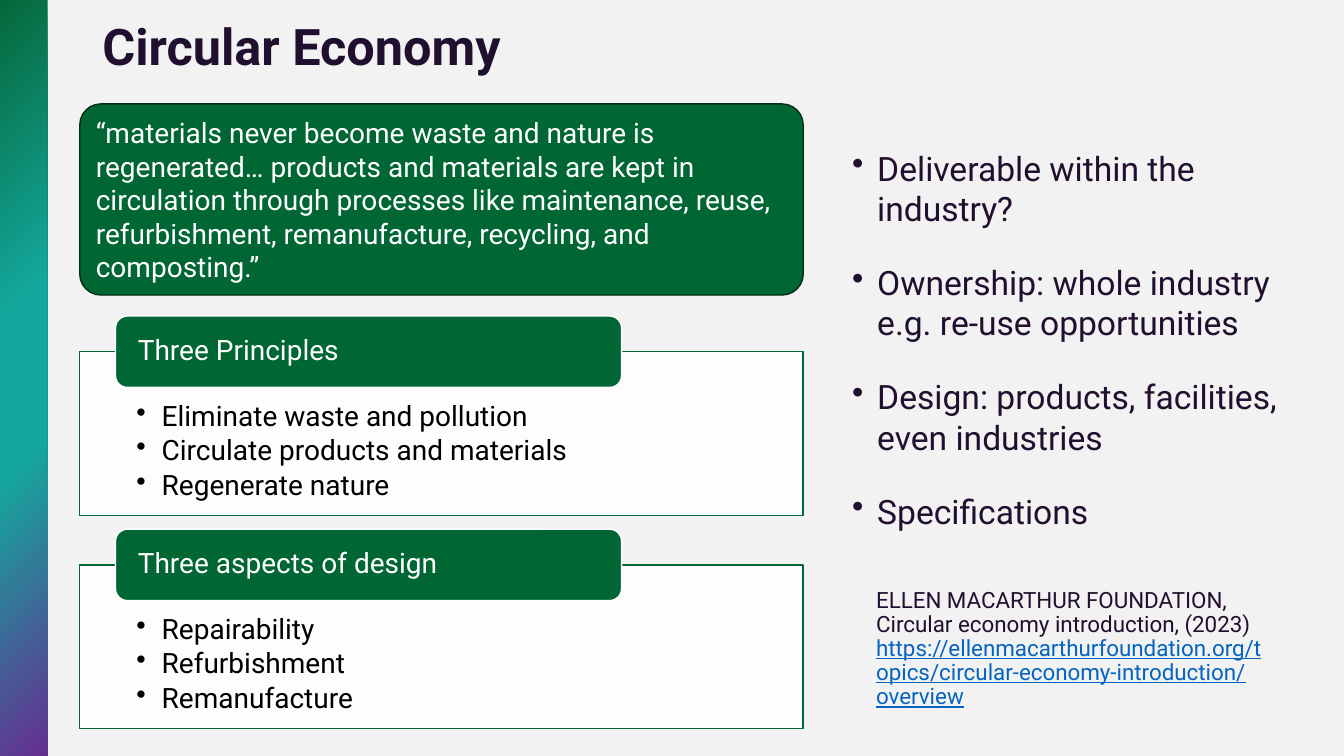
"""Build the Circular Economy slide."""
from dataclasses import dataclass

from pptx import Presentation
from pptx.dml.color import RGBColor
from pptx.enum.shapes import MSO_SHAPE
from pptx.enum.text import MSO_ANCHOR, PP_ALIGN
from pptx.oxml import parse_xml
from pptx.oxml.ns import nsdecls, qn
from pptx.oxml.xmlchemy import OxmlElement
from pptx.util import Emu, Pt

RECT = MSO_SHAPE.RECTANGLE
ROUNDED = MSO_SHAPE.ROUNDED_RECTANGLE
TOP, MIDDLE = MSO_ANCHOR.TOP, MSO_ANCHOR.MIDDLE
LEFT = PP_ALIGN.LEFT

EMU_PER_PX = 9525
FONT = "Roboto"
COLOURS = {
    "background": "F2F2F2",
    "ink": "210F2F",
    "green": "006633",
    "dark green": "002D16",
    "white": "FFFFFF",
    "black": "000000",
    "link": "0563C1",
}
BAR_STOPS = {0: "662E91", 40: "14A79D", 60: "14A79D", 100: "05683A"}
PANEL_PITCH = 203
BULLET_INDENT = 24


@dataclass(frozen=True)
class Box:
    left: int
    top: int
    width: int
    height: int

    def down(self, distance: int) -> "Box":
        return Box(self.left, self.top + distance, self.width, self.height)


@dataclass(frozen=True)
class Piece:
    text: str
    size: int
    colour: str
    bold: bool = False
    underline: bool = False


@dataclass(frozen=True)
class Panel:
    heading: str
    points: tuple[str, ...]


PANELS = (
    Panel("Three Principles", (
        "Eliminate waste and pollution",
        "Circulate products and materials",
        "Regenerate nature",
    )),
    Panel("Three aspects of design", ("Repairability", "Refurbishment", "Remanufacture")),
)
PANEL_BOX = Box(76, 335, 689, 156)
HEADING_BOX = Box(110, 301, 482, 68)
QUOTE = (
    "“materials never become waste and nature is regenerated… products and materials "
    "are kept in circulation through processes like maintenance, reuse, refurbishment, "
    "remanufacture, recycling, and composting.”"
)
QUESTIONS = (
    "Deliverable within the industry?",
    "Ownership: whole industry e.g. re-use opportunities",
    "Design: products, facilities, even industries",
    "Specifications",
)
CITATION = (
    Piece("ELLEN MACARTHUR FOUNDATION, Circular economy introduction, (2023) ", 16, "ink"),
    Piece("https://ellenmacarthurfoundation.org/topics/circular-economy-introduction/overview",
          16, "link", underline=True),
)


def px(length: int) -> Emu:
    return Emu(length * EMU_PER_PX)


def rgb(name: str) -> RGBColor:
    return RGBColor.from_string(COLOURS[name])


def add_box(slide, kind, box: Box, fill: str, line: str):
    shape = slide.shapes.add_shape(kind, px(box.left), px(box.top), px(box.width), px(box.height))
    shape.shadow.inherit = False
    shape.fill.solid()
    shape.fill.fore_color.rgb = rgb(fill)
    shape.line.color.rgb = rgb(line)
    shape.line.width = Pt(1)
    return shape


def add_text_box(slide, box: Box):
    return slide.shapes.add_textbox(px(box.left), px(box.top), px(box.width), px(box.height))


def add_bullet(paragraph) -> None:
    properties = paragraph._p.get_or_add_pPr()
    properties.set("marL", str(px(BULLET_INDENT)))
    properties.set("indent", str(-px(BULLET_INDENT)))
    bullet = OxmlElement("a:buChar")
    bullet.set("char", "•")
    properties.append(bullet)


def write(shape, paragraphs, anchor=TOP, bulleted: bool = False, before: int = 0,
          margins: dict[str, int] | None = None, **spacing) -> None:
    frame = shape.text_frame
    frame.word_wrap = True
    frame.vertical_anchor = anchor
    for side, length in (margins or {}).items():
        setattr(frame, f"margin_{side}", px(length))
    for index, pieces in enumerate(paragraphs):
        paragraph = frame.add_paragraph() if index else frame.paragraphs[0]
        if bulleted:
            add_bullet(paragraph)
        formats = {"alignment": LEFT, "space_before": Pt(before if index else 0), **spacing}
        for attribute, value in formats.items():
            setattr(paragraph, attribute, value)
        for piece in pieces:
            run = paragraph.add_run()
            run.text = piece.text
            looks = {"name": FONT, "size": Pt(piece.size), "bold": piece.bold,
                     "underline": piece.underline}
            for attribute, value in looks.items():
                setattr(run.font, attribute, value)
            run.font.color.rgb = rgb(piece.colour)


def add_gradient_bar(slide) -> None:
    bar = add_box(slide, RECT, Box(0, 0, 45, 720), "green", "green")
    bar.line.fill.background()
    stops = "".join(
        f'<a:gs pos="{position * 1000}"><a:srgbClr val="{colour}"/></a:gs>'
        for position, colour in BAR_STOPS.items()
    )
    gradient = parse_xml(
        f'<a:gradFill {nsdecls("a")} rotWithShape="1"><a:gsLst>{stops}</a:gsLst>'
        '<a:path path="circle"><a:fillToRect l="100000" t="100000"/></a:path></a:gradFill>'
    )
    properties = bar.element.spPr
    properties.replace(properties.find(qn("a:solidFill")), gradient)


def add_panel(slide, panel: Panel, distance: int) -> None:
    body = add_box(slide, RECT, PANEL_BOX.down(distance), "white", "green")
    alpha = OxmlElement("a:alpha")
    alpha.set("val", "90000")
    body.element.spPr.find(qn("a:solidFill"))[0].append(alpha)
    write(body, [[Piece(point, 20, "black")] for point in panel.points], bulleted=True,
          margins={"left": 54, "top": 48, "right": 54, "bottom": 15},
          line_spacing=0.9, space_after=Pt(3))
    heading = add_box(slide, ROUNDED, HEADING_BOX.down(distance), "green", "white")
    write(heading, [[Piece(panel.heading, 20, "white")]], MIDDLE,
          margins={"left": 18, "top": 0, "right": 18, "bottom": 0}, line_spacing=0.9)


def main() -> None:
    deck = Presentation()
    deck.slide_width, deck.slide_height = px(1280), px(720)
    slide = deck.slides.add_slide(deck.slide_layouts[6])
    slide.background.fill.solid()
    slide.background.fill.fore_color.rgb = rgb("background")

    add_gradient_bar(slide)
    title = add_text_box(slide, Box(88, 14, 909, 65))
    write(title, [[Piece("Circular Economy", 36, "ink", bold=True)]], MIDDLE, line_spacing=0.9)
    questions = add_text_box(slide, Box(802, 136, 438, 560))
    write(questions, [[Piece(question, 24, "ink")] for question in QUESTIONS],
          bulleted=True, before=12, space_after=Pt(12))
    for index, panel in enumerate(PANELS):
        add_panel(slide, panel, index * PANEL_PITCH)
    quote = add_box(slide, ROUNDED, Box(76, 99, 689, 182), "green", "dark green")
    quote.adjustments[0] = 0.11
    write(quote, [[Piece(QUOTE, 20, "white")]], MIDDLE)
    citation = add_text_box(slide, Box(825, 556, 393, 126))
    write(citation, [CITATION], line_spacing=0.9)

    deck.save("out.pptx")


if __name__ == "__main__":
    main()
